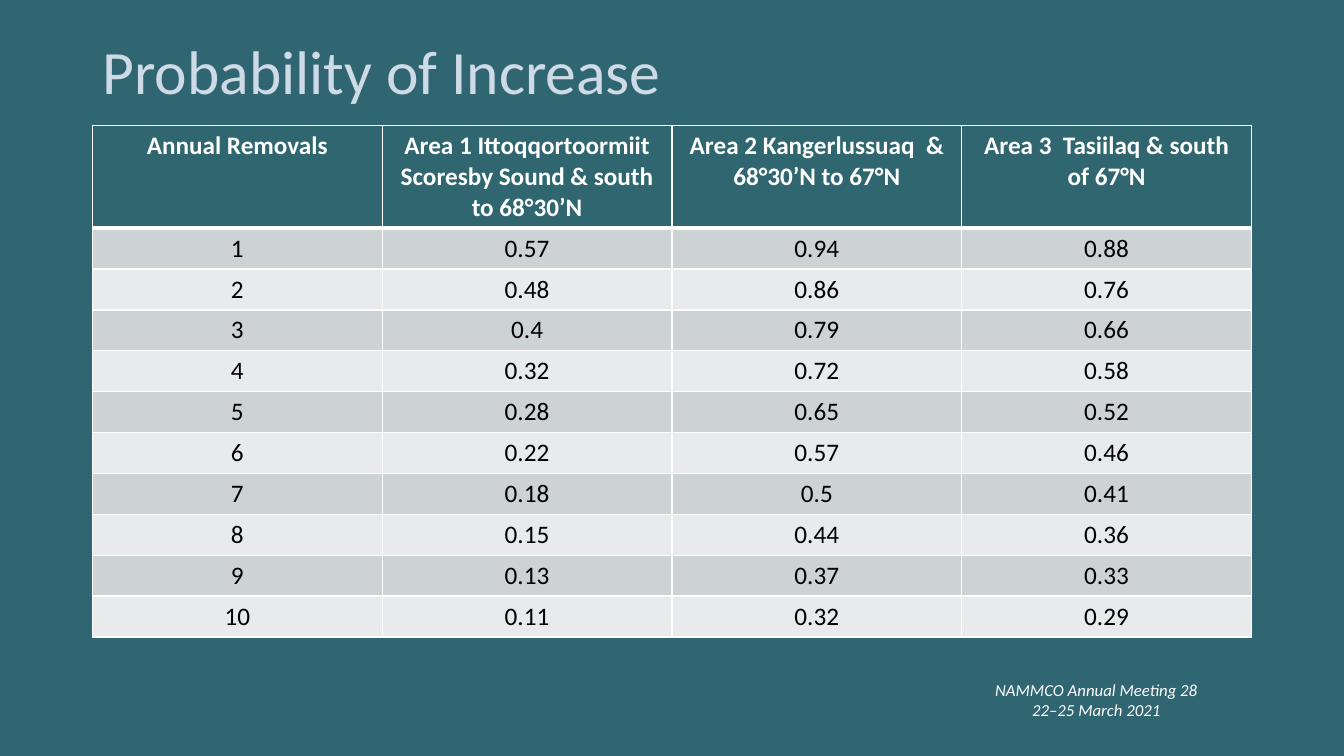
"""Build the slide with the table of increase probabilities by area."""
from lxml.etree import SubElement
from pptx import Presentation
from pptx.dml.color import RGBColor
from pptx.enum.text import MSO_ANCHOR as Anchor, PP_ALIGN as Align
from pptx.oxml.ns import qn
from pptx.util import Cm, Pt

TITLE = "Probability of Increase"
MEETING = ["NAMMCO Annual Meeting 28", "22–25 March 2021"]
HEADINGS = [
    "Annual Removals",
    "Area 1 Ittoqqortoormiit Scoresby Sound & south to 68°30’N",
    "Area 2 Kangerlussuaq  & 68°30’N to 67°N",
    "Area 3  Tasiilaq & south of 67°N",
]
PROBABILITIES = [
    (0.57, 0.94, 0.88),
    (0.48, 0.86, 0.76),
    (0.4, 0.79, 0.66),
    (0.32, 0.72, 0.58),
    (0.28, 0.65, 0.52),
    (0.22, 0.57, 0.46),
    (0.18, 0.5, 0.41),
    (0.15, 0.44, 0.36),
    (0.13, 0.37, 0.33),
    (0.11, 0.32, 0.29),
]

FONT = "Calibri"
TEAL = RGBColor(0x30, 0x66, 0x72)
HEADER_TEAL = RGBColor(0x30, 0x66, 0x70)
PALE_BLUE = RGBColor(0xCE, 0xDB, 0xE6)
BANDS = [RGBColor(0xCD, 0xD3, 0xD5), RGBColor(0xE8, 0xEA, 0xEB)]
WHITE = RGBColor(0xFF, 0xFF, 0xFF)
BLACK = RGBColor(0, 0, 0)

LEFT, WIDTH = Cm(2.33), Cm(29.21)
HEADER_HEIGHT, ROW_HEIGHT = Cm(2.58), Cm(1.03)


def write(frame, lines, size, color, align=Align.CENTER, bold=False, italic=False, spacing=None):
    for index, line in enumerate(lines):
        para = frame.paragraphs[0] if index == 0 else frame.add_paragraph()
        para.alignment = align
        para.line_spacing = spacing
        span = para.add_run()
        span.text = line
        font = span.font
        font.name, font.size, font.bold, font.italic = FONT, Pt(size), bold, italic
        font.color.rgb = color


def add_borders(cell, top=1, bottom=1):
    properties = cell._tc.get_or_add_tcPr()
    widths = {"a:lnL": 1, "a:lnR": 1, "a:lnT": top, "a:lnB": bottom}
    for position, (tag, width) in enumerate(widths.items()):
        line = SubElement(properties, qn(tag), w=str(Pt(width)))
        fill = SubElement(line, qn("a:solidFill"))
        SubElement(fill, qn("a:srgbClr"), val=str(WHITE))
        properties.insert(position, line)


def add_title(page):
    title = page.shapes.title
    title.left, title.top, title.width, title.height = LEFT, Cm(0.05), WIDTH, Cm(3.68)
    title.text_frame.vertical_anchor = Anchor.MIDDLE
    write(title.text_frame, [TITLE], 44, PALE_BLUE, align=Align.LEFT, spacing=0.9)


def add_probability_table(page):
    rows = [HEADINGS]
    rows += [(removals, *values) for removals, values in enumerate(PROBABILITIES, 1)]
    height = HEADER_HEIGHT + ROW_HEIGHT * len(PROBABILITIES)
    table = page.shapes.add_table(
        len(rows), len(HEADINGS), LEFT, Cm(3.17), WIDTH, height
    ).table
    table.horz_banding = False
    for row_index, values in enumerate(rows):
        header = row_index == 0
        table.rows[row_index].height = HEADER_HEIGHT if header else ROW_HEIGHT
        for column, value in enumerate(values):
            cell = table.cell(row_index, column)
            cell.fill.solid()
            cell.fill.fore_color.rgb = HEADER_TEAL if header else BANDS[(row_index - 1) % 2]
            add_borders(cell, top=3 if row_index == 1 else 1, bottom=3 if header else 1)
            write(cell.text_frame, [str(value)], 18, WHITE if header else BLACK, bold=header)


def add_meeting_note(page):
    box = page.shapes.add_textbox(Cm(24.71), Cm(17.12), Cm(5.84), Cm(1.02))
    box.text_frame.word_wrap = True
    box.text_frame.vertical_anchor = Anchor.MIDDLE
    write(box.text_frame, MEETING, 12, WHITE, italic=True)


def main():
    deck = Presentation()
    deck.slide_width, deck.slide_height = Cm(33.87), Cm(19.05)
    page = deck.slides.add_slide(deck.slide_layouts[5])
    page.background.fill.solid()
    page.background.fill.fore_color.rgb = TEAL
    add_meeting_note(page)
    add_title(page)
    add_probability_table(page)
    deck.save("out.pptx")


if __name__ == "__main__":
    main()
